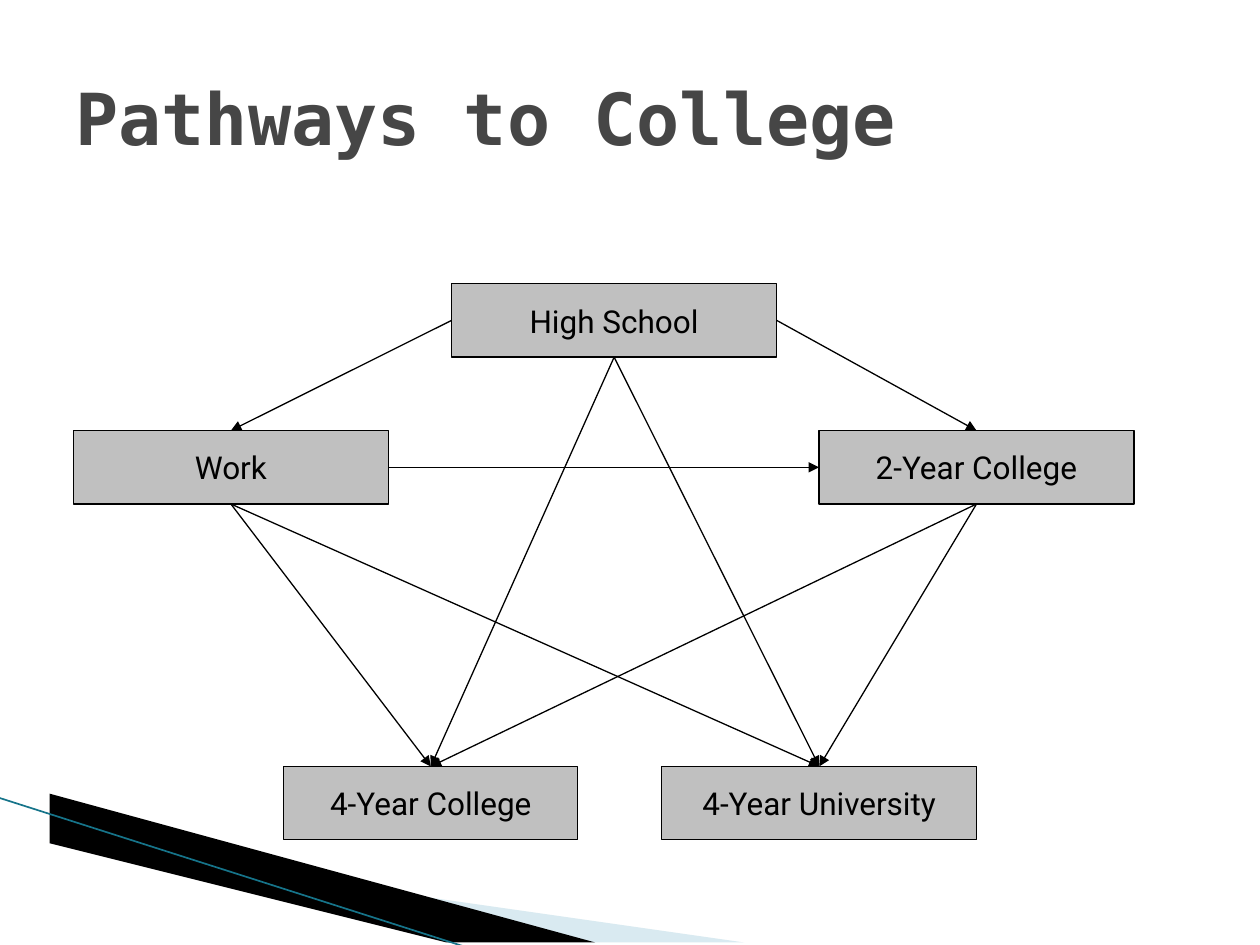
"""Build the Pathways to College slide."""
import lxml.etree
import pptx
import pptx.dml.color
import pptx.enum.shapes
import pptx.enum.text
import pptx.oxml.ns
import pptx.util

Cm = pptx.util.Cm
Pt = pptx.util.Pt
RGBColor = pptx.dml.color.RGBColor
qn = pptx.oxml.ns.qn
Align = pptx.enum.text.PP_ALIGN
Anchor = pptx.enum.text.MSO_ANCHOR

BLACK = RGBColor(0x00, 0x00, 0x00)
SILVER = RGBColor(0xC0, 0xC0, 0xC0)
SLATE = RGBColor(0x46, 0x46, 0x46)
PALE = RGBColor(0xA0, 0xCB, 0xDC)
TEAL = RGBColor(0x16, 0x74, 0x8A)

TOP, LEFT, BOTTOM, RIGHT = range(4)


def write(shape, text, font, size, color):
    frame = shape.text_frame
    frame.text = text
    frame.vertical_anchor = Anchor.MIDDLE
    style = frame.paragraphs[0].runs[0].font
    style.name = font
    style.size = Pt(size)
    style.color.rgb = color
    return frame, style


def draw(start, end, color, width):
    line = slide.shapes.add_connector(
        pptx.enum.shapes.MSO_CONNECTOR.STRAIGHT,
        Cm(start[0]), Cm(start[1]), Cm(end[0]), Cm(end[1]))
    line.line.color.rgb = color
    line.line.width = Pt(width)
    lxml.etree.SubElement(line._element.spPr, qn("a:effectLst"))
    return line


deck = pptx.Presentation()
deck.slide_width = Cm(25.4)
deck.slide_height = Cm(19.05)
slide = deck.slides.add_slide(deck.slide_layouts[6])

wedges = [
    (PALE, [(1.4, 16.54), (15.11, 19.08), (11.58, 19.08), (1.4, 16.51)]),
    (BLACK, [(1.35, 16.48), (11.61, 19.08), (9.45, 19.1), (1.37, 16.51)]),
]
for color, points in wedges:
    path = slide.shapes.build_freeform(*points[0], scale=Cm(1))
    path.add_line_segments(points[1:], close=True)
    wedge = path.convert_to_shape()
    wedge.shadow.inherit = False
    wedge.fill.solid()
    wedge.fill.fore_color.rgb = color
    wedge.line.fill.background()
    if color == PALE:
        tint = wedge._element.spPr.find(".//" + qn("a:srgbClr"))
        lxml.etree.SubElement(tint, qn("a:alpha"), val="40000")

draw((-0.03, 16.08), (9.42, 19.1), TEAL, 0.95)

title = slide.shapes.add_textbox(Cm(1.27), Cm(0.76), Cm(22.86), Cm(3.18))
frame, style = write(title, "Pathways to College", "DejaVu Sans Mono", 41, SLATE)
frame.word_wrap = True
style.bold = True

stops = [
    ("High School", 9.1, 5.72, 6.56),
    ("4-Year College", 5.72, 15.45, 5.93),
    ("4-Year University", 13.34, 15.45, 6.35),
    ("2-Year College", 16.51, 8.68, 6.35),
    ("Work", 1.48, 8.68, 6.35),
]
boxes = {}
for name, left, top, width in stops:
    box = slide.shapes.add_shape(
        pptx.enum.shapes.MSO_SHAPE.RECTANGLE,
        Cm(left), Cm(top), Cm(width), Cm(1.48))
    box.shadow.inherit = False
    box.fill.solid()
    box.fill.fore_color.rgb = SILVER
    box.line.color.rgb = BLACK
    box.line.width = Pt(0.75)
    frame, style = write(box, name, "Roboto", 18, BLACK)
    frame.word_wrap = False
    frame.paragraphs[0].alignment = Align.CENTER
    boxes[name] = box

routes = [
    ("High School", LEFT, "Work", TOP),
    ("Work", BOTTOM, "4-Year College", TOP),
    ("Work", BOTTOM, "4-Year University", TOP),
    ("Work", RIGHT, "2-Year College", LEFT),
    ("High School", BOTTOM, "4-Year College", TOP),
    ("High School", BOTTOM, "4-Year University", TOP),
    ("2-Year College", BOTTOM, "4-Year University", TOP),
    ("High School", RIGHT, "2-Year College", TOP),
    ("2-Year College", BOTTOM, "4-Year College", TOP),
]
for source, exit, target, entry in routes:
    arrow = draw((0, 0), (1, 1), BLACK, 0.75)
    arrow.begin_connect(boxes[source], exit)
    arrow.end_connect(boxes[target], entry)
    lxml.etree.SubElement(arrow.line._get_or_add_ln(), qn("a:tailEnd"), type="triangle")

deck.save("out.pptx")
